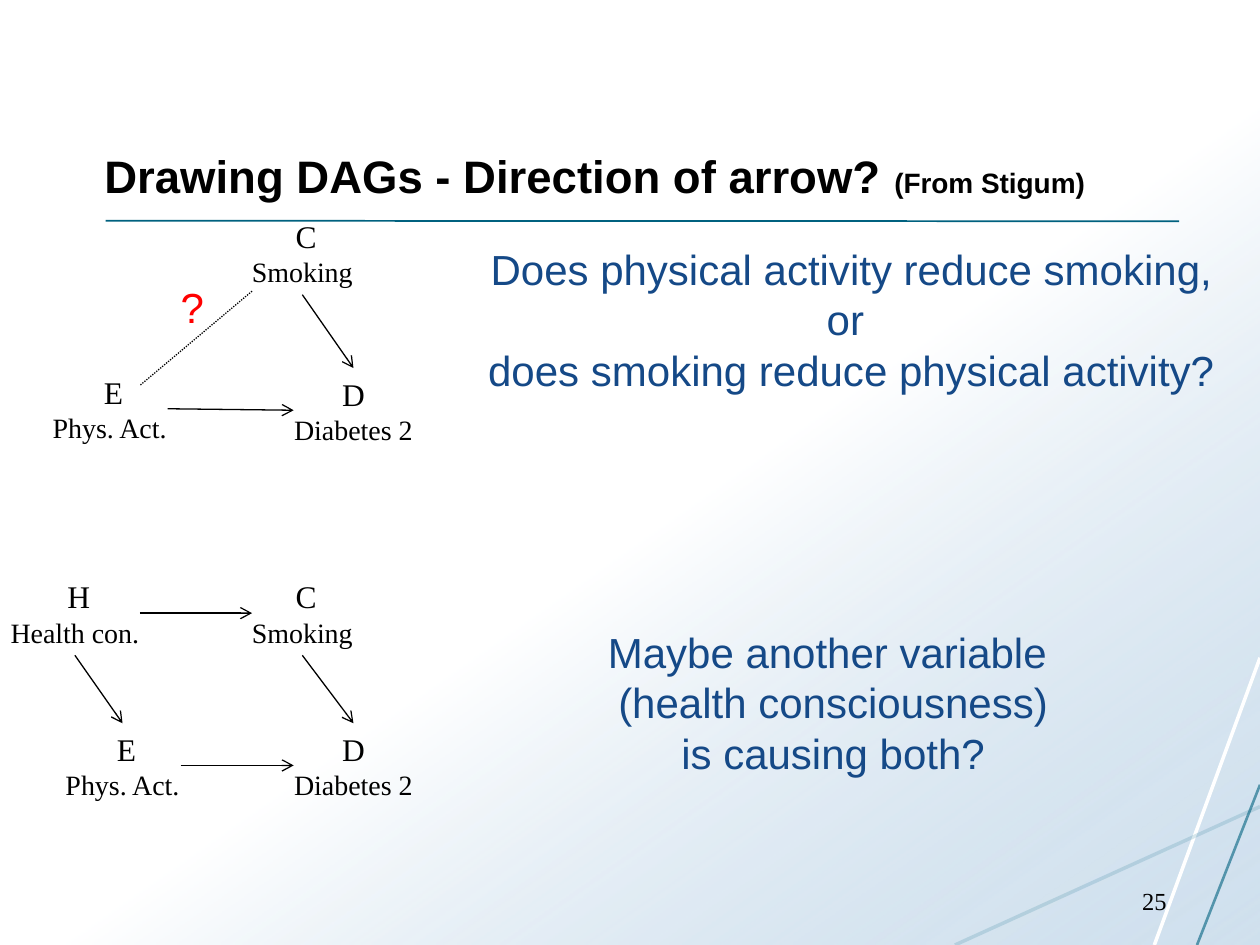
from lxml.etree import SubElement
from pptx import Presentation
from pptx.dml.color import RGBColor
from pptx.enum.dml import MSO_LINE_DASH_STYLE as Dash
from pptx.enum.shapes import MSO_CONNECTOR as Link, MSO_SHAPE as Preset
from pptx.enum.text import MSO_ANCHOR as Anchor, MSO_AUTO_SIZE as Fit, PP_ALIGN as Align
from pptx.oxml.ns import qn
from pptx.util import Cm, Pt

TOP, LEFT, BOTTOM, RIGHT = range(4)
SERIF, SANS = "Times New Roman", "Arial"


def colour(code):
    return RGBColor.from_string(code)


def write(frame, lines, align, anchor):
    """Fill a text frame; each line is a list of (text, size, font, colour, bold)."""
    frame.word_wrap = False
    frame.auto_size = Fit.NONE
    frame.vertical_anchor = anchor
    for i, spans in enumerate(lines):
        para = frame.paragraphs[0] if i == 0 else frame.add_paragraph()
        para.alignment = align
        for text, size, font, code, bold in spans:
            span = para.add_run()
            span.text = text
            for name, value in {"size": Pt(size), "name": font, "bold": bold}.items():
                setattr(span.font, name, value)
            span.font.color.rgb = colour(code)


deck = Presentation()
deck.slide_width, deck.slide_height = Cm(25.4), Cm(19.05)
page = deck.slides.add_slide(deck.slide_layouts[5])
shapes = page.shapes

# Title
title = shapes.title
place = {"left": Cm(1.85), "top": Cm(0.84), "width": Cm(21.9), "height": Cm(3.38)}
for name, value in place.items():
    setattr(title, name, value)
write(title.text_frame, [[("Drawing DAGs - Direction of arrow? ", 26, SANS, "000000", True),
                          ("(From Stigum)", 16, SANS, "000000", True)]],
      Align.LEFT, Anchor.BOTTOM)

# Backdrop, kept behind the title
backdrop = shapes.add_shape(Preset.RECTANGLE, 0, 0, deck.slide_width, deck.slide_height)
backdrop.shadow.inherit = False
backdrop.line.fill.background()
backdrop.fill.gradient()
backdrop.fill.gradient_angle = 305
for stop, (position, code) in zip(backdrop.fill.gradient_stops,
                                  [(0.54, "FFFFFF"), (1, "A9C7E0")]):
    stop.position = position
    stop.color.rgb = colour(code)
tints = list(backdrop._element.iter(qn("a:srgbClr")))
SubElement(tints[-1], qn("a:alpha"), val="54000")
title._element.addprevious(backdrop._element)

# Nodes of the two graphs: letter, label, left, top, width
nodes = {}
for key, letter, label, left, top, width in [
    ("D1", "D", "Diabetes 2", 5.92, 7.42, 2.41),
    ("E1", " E", "Phys. Act.", 1.04, 7.39, 2.34),
    ("C1", " C", "Smoking", 5.08, 4.24, 2.03),
    ("D2", "D", "Diabetes 2", 5.92, 14.58, 2.41),
    ("E2", " E", "Phys. Act.", 1.3, 14.58, 2.34),
    ("C2", " C", "Smoking", 5.08, 11.51, 2.03),
    ("H2", " H", "Health con.", 0.2, 11.51, 2.62),
]:
    box = shapes.add_shape(Preset.FLOWCHART_PROCESS, Cm(left), Cm(top), Cm(width), Cm(1.7))
    box.shadow.inherit = False
    box.fill.background()
    box.line.fill.background()
    for side in ("left", "top", "right", "bottom"):
        setattr(box.text_frame, f"margin_{side}", 0)
    write(box.text_frame, [[(letter, 18, SERIF, "000000", False)],
                           [(label, 16, SERIF, "000000", False)]],
          Align.CENTER, Anchor.MIDDLE)
    nodes[key] = box

# Plain lines: ends, colour, width, opacity, dash
lines = []
for ends, code, width, opacity, dash in [
    ((25.4, 13.26, 23.27, 19.05), "FFFFFF", 2, 100, None),
    ((25.4, 16.26, 19.25, 19.05), "15718F", 2, 16, None),
    ((25.4, 15.82, 24.13, 19.05), "00617F", 1.5, 60, None),
    ((2.13, 4.45, 23.77, 4.46), "00617F", 1, 100, None),
    ((5.08, 5.87, 2.82, 7.77), "000000", 0.75, 100, Dash.ROUND_DOT),
]:
    line = shapes.add_connector(Link.STRAIGHT, *map(Cm, ends))
    line.line.color.rgb = colour(code)
    line.line.width = Pt(width)
    if dash:
        line.line.dash_style = dash
    if opacity < 100:
        tint = next(line._element.iter(qn("a:srgbClr")))
        SubElement(tint, qn("a:alpha"), val=str(opacity * 1000))
    lines.append(line)

# Arrows between nodes
for start, out_side, end, in_side in [
    ("E1", RIGHT, "D1", LEFT),
    ("C1", BOTTOM, "D1", TOP),
    ("E2", RIGHT, "D2", LEFT),
    ("C2", BOTTOM, "D2", TOP),
    ("H2", BOTTOM, "E2", TOP),
    ("H2", RIGHT, "C2", LEFT),
]:
    arrow = shapes.add_connector(Link.STRAIGHT, 0, 0, 0, 0)
    arrow.begin_connect(nodes[start], out_side)
    arrow.end_connect(nodes[end], in_side)
    arrow.line.color.rgb = colour("000000")
    arrow.line.width = Pt(0.75)
    SubElement(arrow.line._get_or_add_ln(), qn("a:tailEnd"), type="arrow")
    lines.append(arrow)

for line in lines:
    SubElement(line._element.spPr, qn("a:effectLst"))

# Free text: place, lines, size, font, colour, alignment, anchor
for place, texts, size, font, code, align, anchor in [
    ((3.38, 5.56, 0.99, 1.27), ["?"], 24, SANS, "FF0000", Align.CENTER, Anchor.TOP),
    ((9.58, 4.78, 15.16, 3.3),
     ["Does physical activity reduce smoking,", "or ", "does smoking reduce physical activity?"],
     24, SANS, "154987", Align.CENTER, Anchor.TOP),
    ((12.07, 12.5, 9.45, 3.33),
     ["Maybe another variable ", "(health consciousness)", "is causing both?"],
     24, SANS, "154987", Align.CENTER, Anchor.TOP),
    ((18.21, 17.65, 5.56, 1.02), ["25"], 14, SERIF, "000000", Align.RIGHT, Anchor.MIDDLE),
]:
    box = shapes.add_textbox(*map(Cm, place))
    write(box.text_frame, [[(text, size, font, code, False)] for text in texts], align, anchor)
    box.text_frame.word_wrap = align == Align.RIGHT

deck.save("out.pptx")
